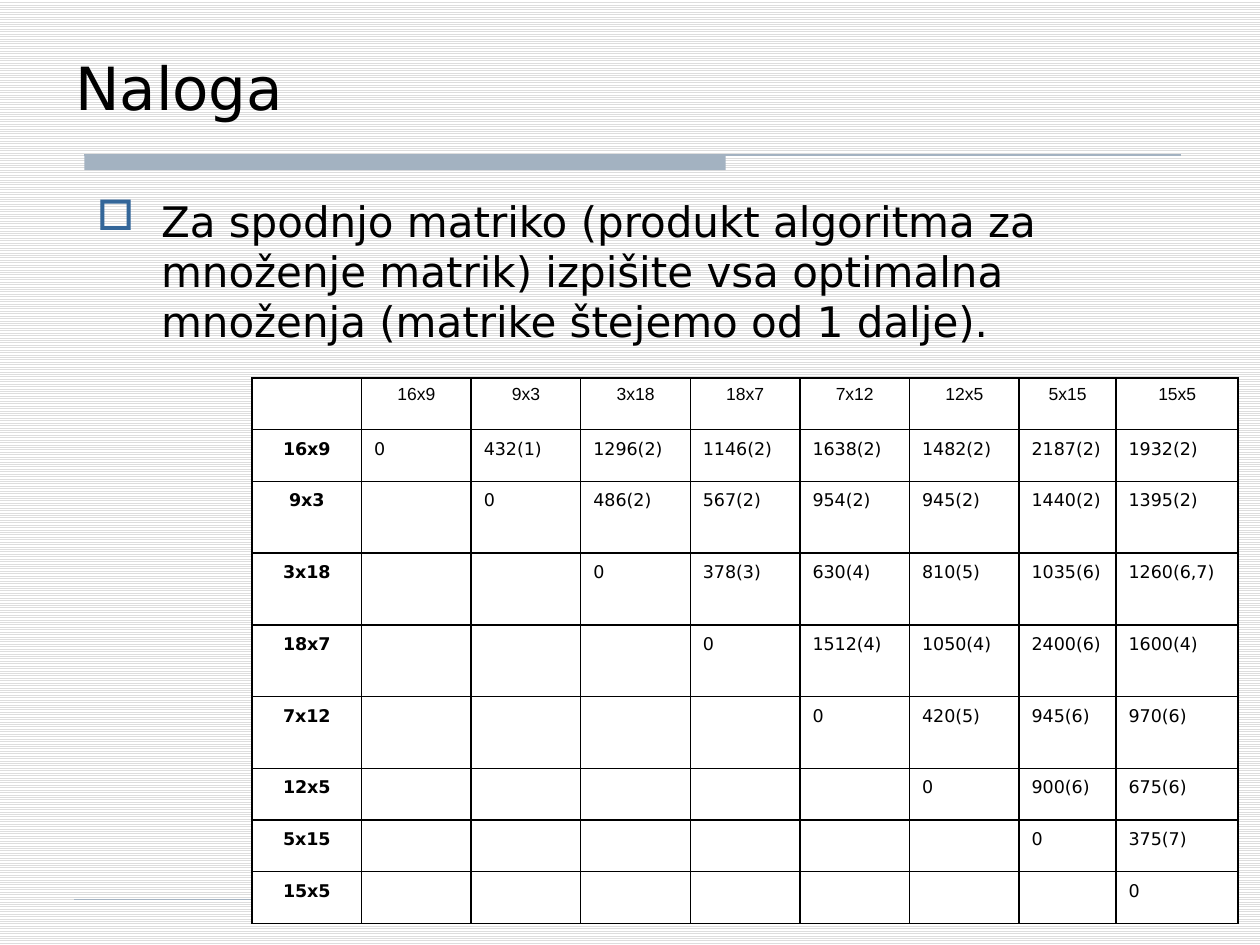
from lxml import etree
from pptx import Presentation
from pptx.dml.color import RGBColor
from pptx.enum.dml import MSO_PATTERN
from pptx.enum.shapes import MSO_CONNECTOR, MSO_SHAPE
from pptx.enum.text import MSO_ANCHOR, PP_ALIGN
from pptx.oxml import parse_xml
from pptx.oxml.ns import nsdecls, qn
from pptx.util import Inches, Pt

LINES = MSO_PATTERN.LIGHT_HORIZONTAL
STRAIGHT = MSO_CONNECTOR.STRAIGHT
RECT = MSO_SHAPE.RECTANGLE
BOTTOM = MSO_ANCHOR.BOTTOM
CENTER = PP_ALIGN.CENTER
SANS = "DejaVu Sans"


def color(text):
    return RGBColor.from_string(text)


def style(par, size, face, bold=False):
    for run in par.runs:
        run.font.size = Pt(size)
        run.font.name = face
        run.font.bold = bold
        run.font.color.rgb = color("000000")


prs = Presentation()
prs.slide_width, prs.slide_height = Inches(10), Inches(7.5)
slide = prs.slides.add_slide(prs.slide_layouts[6])
shapes = slide.shapes

back = slide.background.fill
back.patterned()
back.pattern = LINES
back.fore_color.rgb = color("DDDDDD")
back.back_color.rgb = color("FFFFFF")

# Title bar and rules
bar = shapes.add_shape(RECT, Inches(0.67), Inches(1.23), Inches(5.09), Inches(0.12))
bar.shadow.inherit = False
bar.fill.solid()
bar.fill.fore_color.rgb = color("A3B2C1")
bar.line.fill.background()
for left, right, top, width in [(0.67, 9.37, 1.23, 0.75), (0.59, 9.26, 7.14, 0.25)]:
    rule = shapes.add_connector(
        STRAIGHT, Inches(left), Inches(top), Inches(right), Inches(top))
    rule.line.color.rgb = color("A3B2C1")
    rule.line.width = Pt(width)
    etree.SubElement(rule._element.spPr, qn("a:effectLst"))

# Title
title = shapes.add_textbox(Inches(0.5), Inches(0.3), Inches(9), Inches(0.72)).text_frame
title.word_wrap = True
title.vertical_anchor = BOTTOM
title.text = "Naloga"
style(title.paragraphs[0], 34, SANS)

# Task
task = shapes.add_textbox(Inches(0.67), Inches(1.5), Inches(9), Inches(1.5)).text_frame
task.word_wrap = True
task.text = ("Za spodnjo matriko (produkt algoritma za množenje matrik) izpišite "
             "vsa optimalna množenja (matrike štejemo od 1 dalje).")
par = task.paragraphs[0]
par.space_before = Pt(4.8)
style(par, 24, SANS)
props = par._p.get_or_add_pPr()
props.set("marL", str(Inches(0.51)))
props.set("indent", str(-Inches(0.51)))
tint = etree.SubElement(props, qn("a:buClr"))
etree.SubElement(tint, qn("a:srgbClr"), val="336699")
etree.SubElement(props, qn("a:buChar"), char="□")

# Cost matrix: each row starts on the diagonal
sizes = ["16x9", "9x3", "3x18", "18x7", "7x12", "12x5", "5x15", "15x5"]
costs = [
    "0 432(1) 1296(2) 1146(2) 1638(2) 1482(2) 2187(2) 1932(2)",
    "0 486(2) 567(2) 954(2) 945(2) 1440(2) 1395(2)",
    "0 378(3) 630(4) 810(5) 1035(6) 1260(6,7)",
    "0 1512(4) 1050(4) 2400(6) 1600(4)",
    "0 420(5) 945(6) 970(6)",
    "0 900(6) 675(6)",
    "0 375(7)",
    "0",
]
rows = [[""] + sizes]
for i, (size, cost) in enumerate(zip(sizes, costs)):
    rows.append([size] + [""] * i + cost.split())

widths = [0.87] * 7 + [0.77, 0.97]
heights = [0.41] * 2 + [0.57] * 4 + [0.41] * 3
table = shapes.add_table(
    len(rows), len(widths), Inches(2), Inches(3),
    Inches(sum(widths)), Inches(sum(heights))).table
table.first_row = False
table.horz_banding = False
for col, width in zip(table.columns, widths):
    col.width = Inches(width)
for row, height in zip(table.rows, heights):
    row.height = Inches(height)

for r, row in enumerate(rows):
    for c, text in enumerate(row):
        cell = table.cell(r, c)
        for side in "LRTB":
            cell._tc.get_or_add_tcPr().append(parse_xml(
                f'<a:ln{side} {nsdecls("a")} w="{Pt(1)}"><a:solidFill>'
                f'<a:srgbClr val="000000"/></a:solidFill></a:ln{side}>'))
        cell.fill.solid()
        cell.fill.fore_color.rgb = color("FFFFFF")
        if not text:
            continue
        par = cell.text_frame.paragraphs[0]
        par.text = text
        if r == 0 or c == 0:
            par.alignment = CENTER
        if r > 0:
            par.line_spacing = 1.15
        style(par, 10, SANS if r else "Arial", bold=c == 0)

prs.save("out.pptx")
